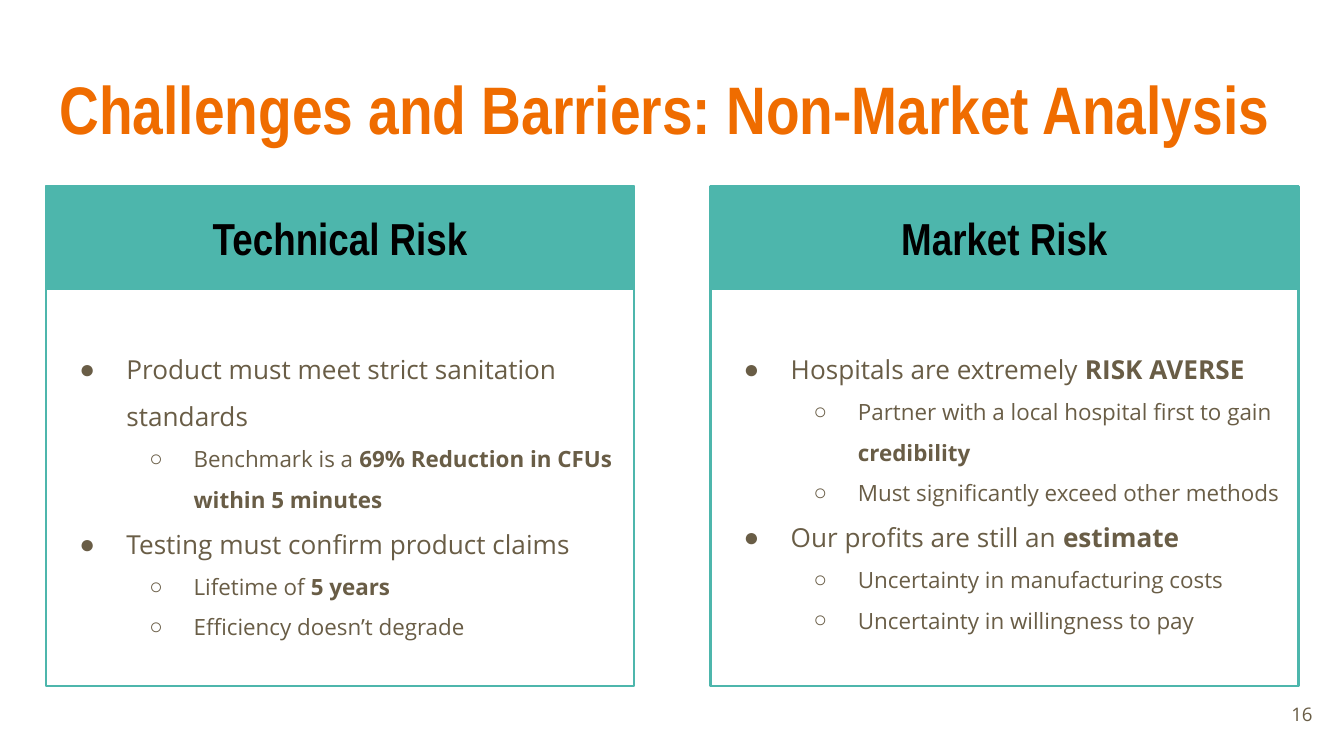
from lxml import etree
from pptx import Presentation
from pptx.dml.color import RGBColor
from pptx.enum.shapes import MSO_SHAPE
from pptx.enum.text import MSO_ANCHOR, PP_ALIGN
from pptx.oxml.ns import qn
from pptx.util import Inches, Pt

RECTANGLE = MSO_SHAPE.RECTANGLE
TOP, MIDDLE = MSO_ANCHOR.TOP, MSO_ANCHOR.MIDDLE
LEFT, CENTER, RIGHT = PP_ALIGN.LEFT, PP_ALIGN.CENTER, PP_ALIGN.RIGHT

COLORS = {"title": "EF6C00", "teal": "4DB6AC", "body": "695D46", "heading": "000000"}
HEADING_FONT, BODY_FONT, BULLET_FONT = "Arial Narrow", "Open Sans", "Arial"

# Per level: bullet, size in points, text indent and hanging indent in inches
LEVELS = [("●", 14, 0.5, 0.35), ("○", 12, 1, 0.33)]

# Grid of 100 columns; rows are as high as columns are wide
COLUMNS = 100
PANEL_LEFTS = (3.42, 52.85)
PANEL_TOP, PANEL_WIDTH, PANEL_HEIGHT, HEADER_HEIGHT = 13.85, 43.75, 37.2, 7.7

# Each bullet: level, plain text, bold text
PANELS = [
    ("Technical Risk", [
        (0, "Product must meet strict sanitation standards", ""),
        (1, "Benchmark is a ", "69% Reduction in CFUs within 5 minutes"),
        (0, "Testing must confirm product claims", ""),
        (1, "Lifetime of ", "5 years"),
        (1, "Efficiency doesn’t degrade", ""),
    ]),
    ("Market Risk", [
        (0, "Hospitals are extremely ", "RISK AVERSE"),
        (1, "Partner with a local hospital first to gain ", "credibility"),
        (1, "Must significantly exceed other methods", ""),
        (0, "Our profits are still an ", "estimate"),
        (1, "Uncertainty in manufacturing costs", ""),
        (1, "Uncertainty in willingness to pay", ""),
    ]),
]


class SlideBuilder:
    def __init__(self, presentation):
        self.slide = presentation.slides.add_slide(presentation.slide_layouts[6])
        self.unit = presentation.slide_width / COLUMNS

    def box(self, *cells):
        """Turn left, top, width and height in grid cells into lengths."""
        return [round(cell * self.unit) for cell in cells]

    def frame(self, shape, anchor=TOP, top_inset=0.1):
        text_frame = shape.text_frame
        text_frame.word_wrap = True
        text_frame.vertical_anchor = anchor
        text_frame.margin_left = text_frame.margin_right = Inches(0.1)
        text_frame.margin_top, text_frame.margin_bottom = Inches(top_inset), Inches(0.1)
        return text_frame

    def format_run(self, run, size, font, color, bold=False):
        run.font.size, run.font.name, run.font.bold = Pt(size), font, bold
        run.font.color.rgb = RGBColor.from_string(COLORS[color])

    def line_of_text(self, text_frame, text, alignment, *style):
        text_frame.text = text
        paragraph = text_frame.paragraphs[0]
        paragraph.alignment = alignment
        self.format_run(paragraph.runs[0], *style)

    def text_box(self, cells, text, alignment, anchor, *style):
        shape = self.slide.shapes.add_textbox(*self.box(*cells))
        self.line_of_text(self.frame(shape, anchor), text, alignment, *style)

    def rectangle(self, cells, line_width, filled):
        shape = self.slide.shapes.add_shape(RECTANGLE, *self.box(*cells))
        shape.shadow.inherit = False
        teal = RGBColor.from_string(COLORS["teal"])
        shape.line.color.rgb, shape.line.width = teal, Pt(line_width)
        if filled:
            shape.fill.solid()
            shape.fill.fore_color.rgb = teal
        else:
            shape.fill.background()
        return shape

    def bullet(self, paragraph, level, plain, bold):
        mark, size, indent, hanging = LEVELS[level]
        paragraph.level = level
        paragraph.alignment = LEFT
        paragraph.line_spacing = 1.5
        paragraph.space_before = Pt(0)
        for text, is_bold in ((plain, False), (bold, True)):
            if text:
                run = paragraph.add_run()
                run.text = text
                self.format_run(run, size, BODY_FONT, "body", is_bold)
        properties = paragraph._p.get_or_add_pPr()
        properties.set("marL", str(Inches(indent)))
        properties.set("indent", str(-Inches(hanging)))
        color = etree.SubElement(properties, qn("a:buClr"))
        etree.SubElement(color, qn("a:srgbClr"), val=COLORS["body"])
        etree.SubElement(properties, qn("a:buFont"), typeface=BULLET_FONT)
        etree.SubElement(properties, qn("a:buChar"), char=mark)

    def panel(self, left, heading, bullets):
        body = self.rectangle((left, PANEL_TOP, PANEL_WIDTH, PANEL_HEIGHT), 1.5, False)
        text_frame = self.frame(body, top_inset=1.13)
        for index, bullet in enumerate(bullets):
            paragraph = text_frame.add_paragraph() if index else text_frame.paragraphs[0]
            self.bullet(paragraph, *bullet)
        header = self.rectangle((left, PANEL_TOP, PANEL_WIDTH, HEADER_HEIGHT), 0.75, True)
        self.line_of_text(self.frame(header, MIDDLE), heading, CENTER,
                          24, HEADING_FONT, "heading", True)


def main():
    presentation = Presentation()
    presentation.slide_width = Inches(10)
    presentation.slide_height = presentation.slide_width * 9 // 16
    builder = SlideBuilder(presentation)
    builder.text_box((3.45, 4, 93.2, 7.7), "Challenges and Barriers: Non-Market Analysis",
                     LEFT, TOP, 36, HEADING_FONT, "title", True)
    for left, (heading, bullets) in zip(PANEL_LEFTS, PANELS):
        builder.panel(left, heading, bullets)
    builder.text_box((92.65, 51, 6, 4.3), "16", RIGHT, MIDDLE, 10, BODY_FONT, "body")
    presentation.save("out.pptx")


if __name__ == "__main__":
    main()
